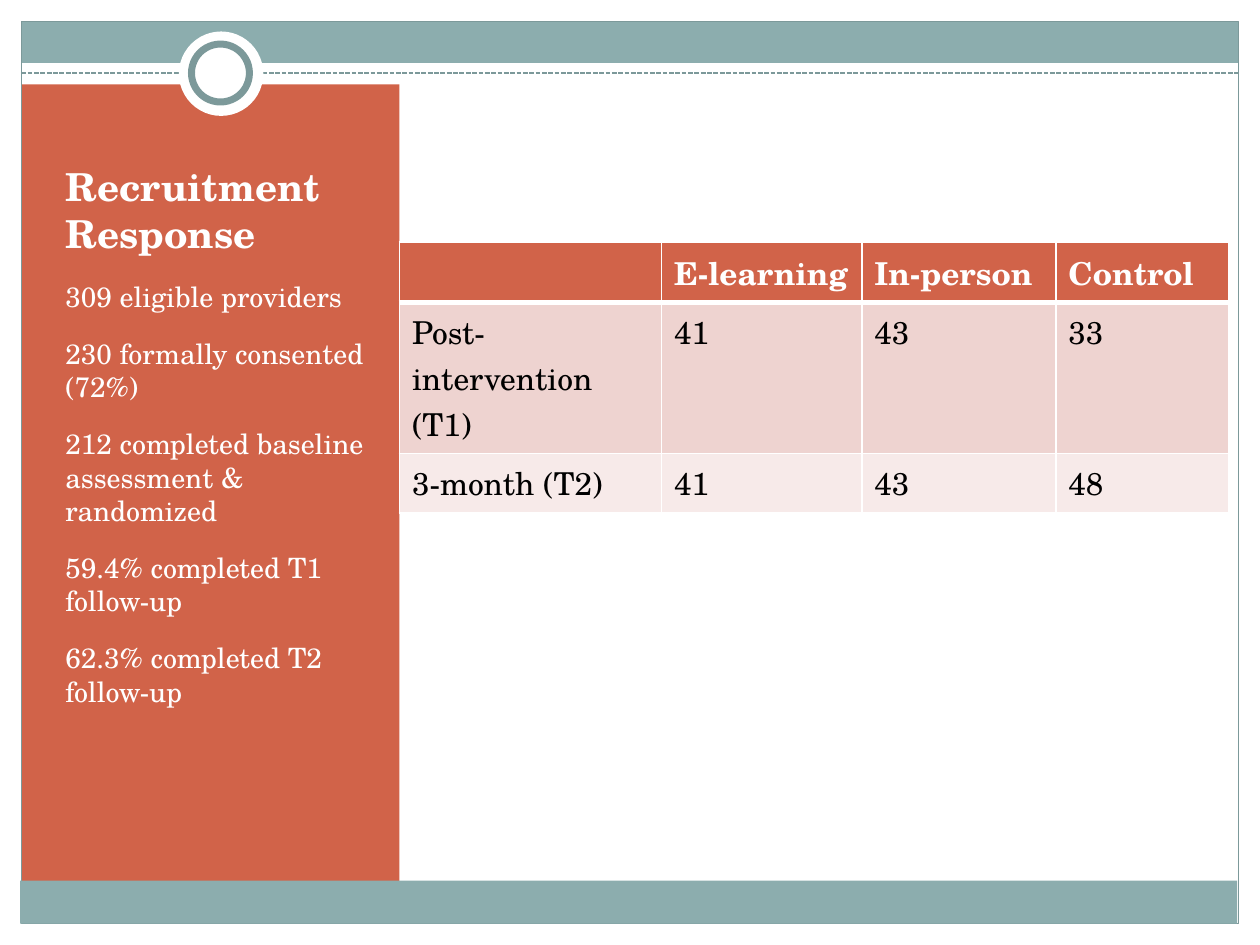
from dataclasses import dataclass
from typing import Optional

import pptx
import pptx.dml.color
import pptx.enum.dml
import pptx.enum.shapes
import pptx.enum.text
import pptx.oxml
import pptx.oxml.ns
import pptx.util
from pptx.util import Inches

MSO_SHAPE = pptx.enum.shapes.MSO_SHAPE
ANCHOR = pptx.enum.text.MSO_ANCHOR


@dataclass(frozen=True)
class Theme:
    font: str = "TeX Gyre Schola"
    white: str = "FFFFFF"
    black: str = "000000"
    band: str = "8CADAE"
    outline: str = "7C999A"
    accent: str = "D16349"
    row_tints: tuple[str, ...] = ("EED3D0", "F7EAE9")
    title_size: float = 22
    body_size: float = 16
    table_size: float = 18


@dataclass(frozen=True)
class Box:
    left: float
    top: float
    width: float
    height: float

    def lengths(self) -> tuple[int, ...]:
        return tuple(Inches(v) for v in (self.left, self.top, self.width, self.height))


@dataclass(frozen=True)
class Decoration:
    box: Box
    fill: Optional[str] = None
    line: Optional[str] = None
    line_width: float = 0
    preset: MSO_SHAPE = MSO_SHAPE.RECTANGLE


THEME = Theme()
FRAME_PARTS = [
    Decoration(Box(0.17, 0.17, 9.66, 0.33), THEME.band),
    Decoration(Box(0, 7.33, 10, 0.17), THEME.white),
    Decoration(Box(9.83, 0, 0.17, 7.5), THEME.white),
    Decoration(Box(0, 0, 10, 0.13), THEME.white),
    Decoration(Box(0, 0, 0.17, 7.5), THEME.white),
    Decoration(Box(0.17, 0.67, 3, 6.42), THEME.accent),
    Decoration(Box(0.17, 0.17, 9.66, 7.16), None, THEME.outline, 0.75),
]
FRONT_PARTS = [
    Decoration(Box(1.42, 0.25, 0.67, 0.67), THEME.white, preset=MSO_SHAPE.OVAL),
    Decoration(Box(1.52, 0.35, 0.46, 0.46), THEME.white, THEME.outline, 4, MSO_SHAPE.OVAL),
    Decoration(Box(0.16, 6.99, 9.66, 0.34), THEME.band),
]
TITLE_BOX = Box(0.42, 1, 2.58, 1.08)
BODY_BOX = Box(0.42, 2.17, 2.58, 4.53)
TABLE_BOX = Box(3.17, 1.92, 6.58, 2.15)
COLUMN_WIDTHS = (2.08, 1.59, 1.54, 1.37)
ROW_HEIGHTS = (0.48, 1.2, 0.47)
FINDINGS = (
    "309 eligible providers",
    "230 formally consented (72%)",
    "212 completed baseline assessment & randomized",
    "59.4% completed T1 follow-up",
    "62.3% completed T2 follow-up",
)
RESPONSES = (
    ("", "E-learning", "In-person", "Control"),
    ("Post-intervention (T1)", "41", "43", "33"),
    ("3-month (T2)", "41", "43", "48"),
)


def rgb(value: str) -> pptx.dml.color.RGBColor:
    return pptx.dml.color.RGBColor.from_string(value)


def set_font(paragraph, size: float, color: str, bold: bool = False) -> None:
    font = paragraph.font
    font.name, font.size, font.bold = THEME.font, pptx.util.Pt(size), bold
    font.color.rgb = rgb(color)


def add_decoration(slide, part: Decoration) -> None:
    shape = slide.shapes.add_shape(part.preset, *part.box.lengths())
    shape.shadow.inherit = False
    if part.fill:
        shape.fill.solid()
        shape.fill.fore_color.rgb = rgb(part.fill)
    else:
        shape.fill.background()
    if part.line:
        shape.line.color.rgb = rgb(part.line)
        shape.line.width = pptx.util.Pt(part.line_width)
    else:
        shape.line.fill.background()


def add_dashed_rule(slide) -> None:
    y = Inches(0.58)
    rule = slide.shapes.add_connector(
        pptx.enum.shapes.MSO_CONNECTOR.STRAIGHT, Inches(0.17), y, Inches(9.83), y)
    rule.line.color.rgb = rgb(THEME.outline)
    rule.line.width = pptx.util.Pt(0.9)
    rule.line.dash_style = pptx.enum.dml.MSO_LINE.SQUARE_DOT
    rule._element.spPr.append(pptx.oxml.parse_xml(
        f"<a:effectLst {pptx.oxml.ns.nsdecls('a')}/>"))


def place_title(slide) -> None:
    title = slide.shapes.title
    title.left, title.top, title.width, title.height = TITLE_BOX.lengths()
    frame = title.text_frame
    frame.text = "Recruitment Response"
    frame.word_wrap = True
    frame.auto_size = pptx.enum.text.MSO_AUTO_SIZE.NONE
    frame.vertical_anchor = ANCHOR.BOTTOM
    paragraph = frame.paragraphs[0]
    paragraph.alignment = pptx.enum.text.PP_ALIGN.LEFT
    set_font(paragraph, THEME.title_size, THEME.white, bold=True)
    # Bring the title in front of the side panel.
    slide.shapes._spTree.append(title._element)


def add_findings(slide) -> None:
    frame = slide.shapes.add_textbox(*BODY_BOX.lengths()).text_frame
    frame.word_wrap = True
    frame.text = "\n".join(FINDINGS)
    for paragraph in frame.paragraphs:
        paragraph.space_before = pptx.util.Pt(0.2 * THEME.body_size)
        paragraph.space_after = pptx.util.Pt(10)
        set_font(paragraph, THEME.body_size, THEME.white)


def set_borders(cell, top: float, bottom: float) -> None:
    """Give a cell white borders; top and bottom widths are in points."""
    properties = cell._tc.get_or_add_tcPr()
    for side, width in (("L", 1), ("R", 1), ("T", top), ("B", bottom)):
        properties.append(pptx.oxml.parse_xml(
            f'<a:ln{side} {pptx.oxml.ns.nsdecls("a")} w="{pptx.util.Pt(width)}">'
            f'<a:solidFill><a:srgbClr val="{THEME.white}"/></a:solidFill></a:ln{side}>'))


def add_response_table(slide) -> None:
    table = slide.shapes.add_table(
        len(RESPONSES), len(COLUMN_WIDTHS), *TABLE_BOX.lengths()).table
    for column, width in zip(table.columns, COLUMN_WIDTHS):
        column.width = Inches(width)
    fills = (THEME.accent, *THEME.row_tints)
    for index, (row, height, fill) in enumerate(zip(table.rows, ROW_HEIGHTS, fills)):
        row.height = Inches(height)
        header = index == 0
        for cell, text in zip(row.cells, RESPONSES[index]):
            set_borders(cell, top=3 if index == 1 else 1, bottom=3 if header else 1)
            cell.fill.solid()
            cell.fill.fore_color.rgb = rgb(fill)
            cell.margin_right = Inches(0.05)
            cell.text = text
            set_font(cell.text_frame.paragraphs[0], THEME.table_size,
                     THEME.white if header else THEME.black, bold=header)


def main() -> None:
    presentation = pptx.Presentation()
    presentation.slide_width, presentation.slide_height = Inches(10), Inches(7.5)
    slide = presentation.slides.add_slide(presentation.slide_layouts[5])
    for part in FRAME_PARTS:
        add_decoration(slide, part)
    add_dashed_rule(slide)
    for part in FRONT_PARTS:
        add_decoration(slide, part)
    place_title(slide)
    add_findings(slide)
    add_response_table(slide)
    presentation.save("out.pptx")


if __name__ == "__main__":
    main()
